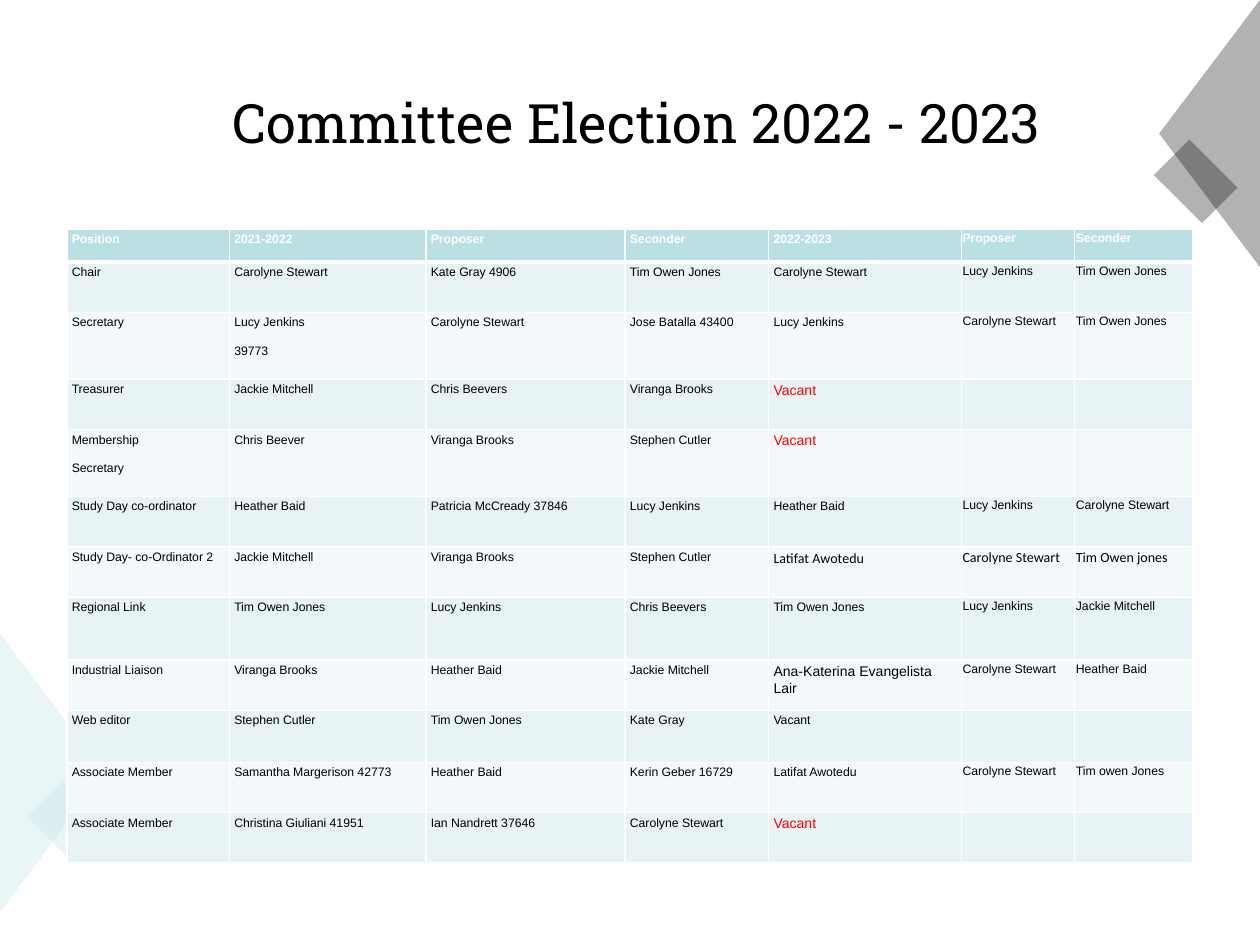
import pptx
import pptx.dml.color
import pptx.enum.shapes
import pptx.enum.text
import pptx.oxml
import pptx.oxml.ns
import pptx.util
from pptx.util import Inches

SHAPE = pptx.enum.shapes.MSO_SHAPE
TEAL, BLACK, WHITE, RED = "BBE0E3", "000000", "FFFFFF", "FF0000"
BANDS = ("E7F3F4", "F3F9FA")

COL_WIDTHS = (1.29, 1.56, 1.58, 1.14, 1.53, 0.9, 0.94)
ROW_HEIGHTS = (0.26, 0.4, 0.53, 0.4, 0.53, 0.4, 0.4, 0.5, 0.4, 0.41, 0.4, 0.4)
ROWS = (
    ("Position", "2021-2022", "Proposer", "Seconder", "2022-2023", "Proposer", "Seconder"),
    ("Chair", "Carolyne Stewart", "Kate Gray 4906", "Tim Owen Jones",
     "Carolyne Stewart", "Lucy Jenkins", "Tim Owen Jones"),
    ("Secretary", "Lucy Jenkins\n39773", "Carolyne Stewart", "Jose Batalla 43400",
     "Lucy Jenkins", "Carolyne Stewart", "Tim Owen Jones"),
    ("Treasurer", "Jackie Mitchell", "Chris Beevers", "Viranga Brooks", "Vacant", "", ""),
    ("Membership\nSecretary", "Chris Beever", "Viranga Brooks", "Stephen Cutler",
     "Vacant", "", ""),
    ("Study Day co-ordinator", "Heather Baid", "Patricia McCready 37846", "Lucy Jenkins",
     "Heather Baid", "Lucy Jenkins", "Carolyne Stewart"),
    ("Study Day- co-Ordinator 2", "Jackie Mitchell", "Viranga Brooks", "Stephen Cutler",
     "Latifat Awotedu", "Carolyne Stewart", "Tim Owen jones"),
    ("Regional Link", "Tim Owen Jones", "Lucy Jenkins", "Chris Beevers",
     "Tim Owen Jones", "Lucy Jenkins", "Jackie Mitchell"),
    ("Industrial Liaison", "Viranga Brooks", "Heather Baid", "Jackie Mitchell",
     "Ana-Katerina Evangelista Lair", "Carolyne Stewart", "Heather Baid"),
    ("Web editor", "Stephen Cutler", "Tim Owen Jones", "Kate Gray", "Vacant", "", ""),
    ("Associate Member", "Samantha Margerison 42773", "Heather Baid", "Kerin Geber 16729",
     "Latifat Awotedu", "Carolyne Stewart", "Tim owen Jones"),
    ("Associate Member", "Christina Giuliani 41951", "Ian Nandrett 37646",
     "Carolyne Stewart", "Vacant", "", ""),
)

VACANT = {"size": 8, "color": RED}
CALIBRI = {"size": 8, "name": "Calibri"}
CALIBRI_TIGHT = {**CALIBRI, "spacing": 1.07, "after": 0}
# Cells, by row and column, that depart from the table's text style
SPECIAL = {(3, 4): VACANT, (4, 4): VACANT, (11, 4): VACANT,
           (6, 4): CALIBRI, (6, 5): CALIBRI_TIGHT, (6, 6): CALIBRI_TIGHT,
           (8, 4): {"size": 8}}


def rgb(value):
    return pptx.dml.color.RGBColor.from_string(value)


def format_paragraph(p, size, color=BLACK, name="Arial", bold=False, spacing=1.06, after=8):
    p.line_spacing = spacing
    p.space_after = pptx.util.Pt(after)
    p.font.size = pptx.util.Pt(size)
    p.font.name = name
    p.font.bold = bold
    p.font.color.rgb = rgb(color)


def add_border(cell, side, width):
    """Add a white border; call for L, R, T, B in that order, before the fill."""
    cell._tc.get_or_add_tcPr().append(pptx.oxml.parse_xml(
        f'<a:ln{side} {pptx.oxml.ns.nsdecls("a")} w="{pptx.util.Pt(width)}">'
        f'<a:solidFill><a:srgbClr val="{WHITE}"/></a:solidFill></a:ln{side}>'))


def add_title(s, left, top, width, height):
    title = s.shapes.title
    title.left, title.top = Inches(left), Inches(top)
    title.width, title.height = Inches(width), Inches(height)
    tf = title.text_frame
    tf.text = "Committee Election 2022 - 2023"
    tf.auto_size = pptx.enum.text.MSO_AUTO_SIZE.NONE
    tf.vertical_anchor = pptx.enum.text.MSO_ANCHOR.MIDDLE
    tf.margin_left = Inches(0.2)
    p = tf.paragraphs[0]
    p.alignment = pptx.enum.text.PP_ALIGN.CENTER
    p.font.size = pptx.util.Pt(31)
    p.font.name = "Roboto Slab"
    p.font.color.rgb = rgb(BLACK)


def add_corner(s, left, top, color, parts):
    """Group translucent shapes; each part is kind, x, y, width, height, rotation."""
    group = s.shapes.add_group_shape()
    for kind, x, y, width, height, rotation in parts:
        sp = group.shapes.add_shape(kind, Inches(left + x), Inches(top + y),
                                    Inches(width), Inches(height))
        sp.rotation = rotation
        sp.shadow.inherit = False
        sp.line.fill.background()
        sp.fill.solid()
        sp.fill.fore_color.rgb = rgb(color)
        clr = sp._element.spPr.find(".//" + pptx.oxml.ns.qn("a:srgbClr"))
        clr.append(pptx.oxml.parse_xml(
            f'<a:alpha {pptx.oxml.ns.nsdecls("a")} val="30000"/>'))


def fill_cell(cell, text, row, col):
    header = row == 0
    narrow = col >= 5
    cell.margin_left = cell.margin_right = Inches(0.01 if narrow else 0.04)
    cell.margin_top = Inches(0.01 if narrow else 0.02)
    cell.margin_bottom = Inches(0 if narrow else 0.02)
    add_border(cell, "L", 1)
    add_border(cell, "R", 1)
    add_border(cell, "T", 3 if row == 1 else 1)
    add_border(cell, "B", 3 if header else 1)
    cell.fill.solid()
    cell.fill.fore_color.rgb = rgb(TEAL if header else BANDS[(row - 1) % 2])
    cell.text = text
    style = {"size": 7, "color": WHITE if header else BLACK, "bold": header}
    style.update(SPECIAL.get((row, col), {}))
    for p in cell.text_frame.paragraphs:
        format_paragraph(p, **style)


def add_election_table(s, left, top, width, height):
    table = s.shapes.add_table(len(ROWS), len(COL_WIDTHS), Inches(left), Inches(top),
                               Inches(width), Inches(height)).table
    table.horz_banding = False
    for column, col_width in zip(table.columns, COL_WIDTHS):
        column.width = Inches(col_width)
    for row, (texts, row_height) in enumerate(zip(ROWS, ROW_HEIGHTS)):
        table.rows[row].height = Inches(row_height)
        for col, text in enumerate(texts):
            fill_cell(table.cell(row, col), text, row, col)


def main():
    prs = pptx.Presentation()
    prs.slide_width, prs.slide_height = Inches(10), Inches(7.5)
    s = prs.slides.add_slide(prs.slide_layouts[5])
    add_title(s, 0.53, 0.35, 8.94, 1.24)
    add_corner(s, 0, 5.03, TEAL, (
        (SHAPE.ISOSCELES_TRIANGLE, -0.69, 0.69, 2.21, 0.83, 90),
        (SHAPE.RECTANGLE, 0.28, 1.3, 0.53, 0.4, 45)))
    add_corner(s, 9.2, 0, BLACK, (
        (SHAPE.RECTANGLE, 0.02, 1.24, 0.54, 0.4, 45),
        (SHAPE.ISOSCELES_TRIANGLE, -0.66, 0.66, 2.12, 0.8, 270)))
    add_election_table(s, 0.53, 1.82, 8.94, 5.04)
    prs.save("out.pptx")


if __name__ == "__main__":
    main()
